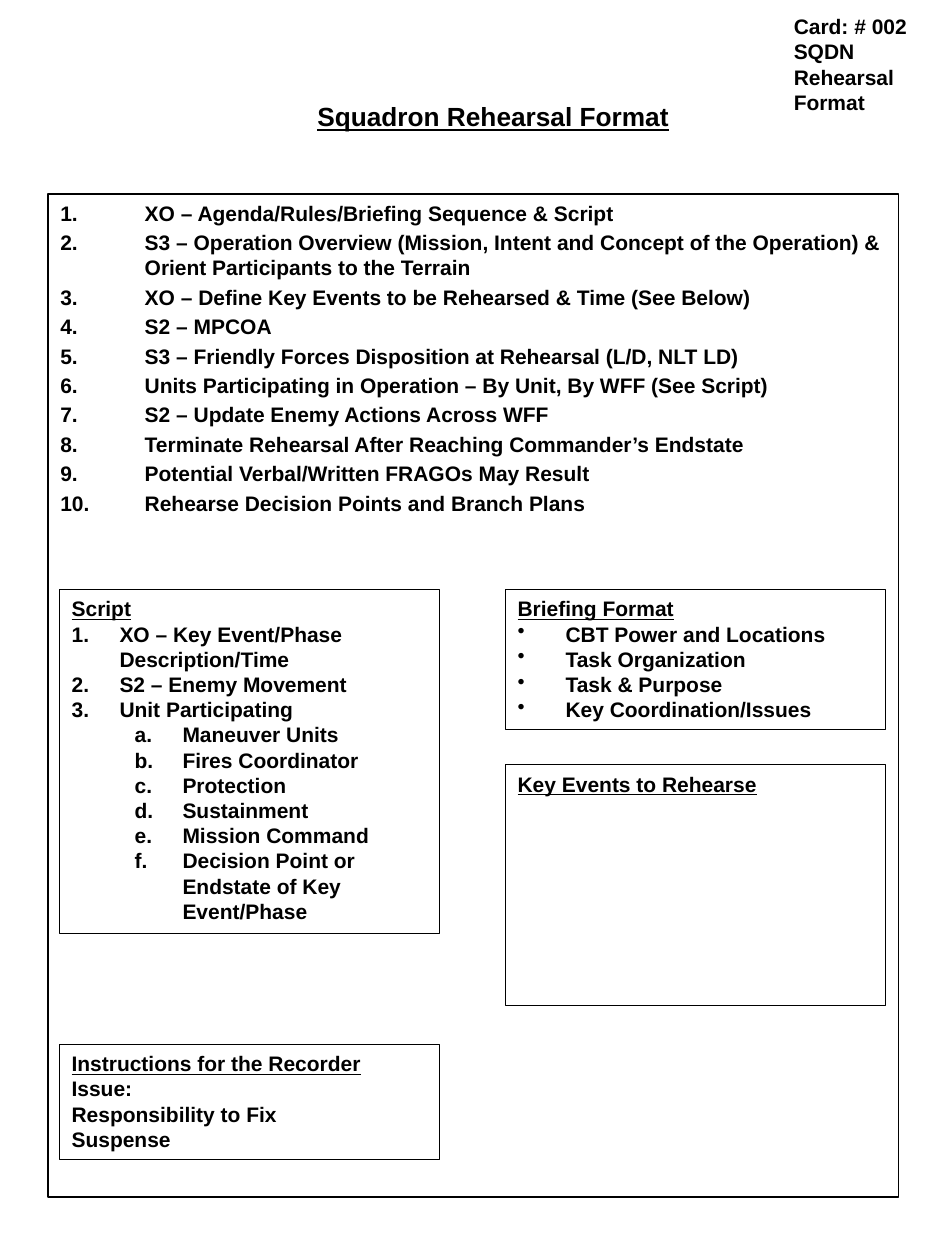
from dataclasses import dataclass

from lxml import etree
from pptx import Presentation
from pptx import util as u
from pptx.dml.color import RGBColor
from pptx.enum import shapes, text
from pptx.oxml.ns import qn


@dataclass(frozen=True)
class Theme:
    font: str = "Arial"
    ink: RGBColor = RGBColor(0, 0, 0)
    body_size: float = 12
    title_size: float = 15
    line_width: float = 0.75


@dataclass(frozen=True)
class Item:
    """One paragraph; marker is a numbering scheme or a bullet character."""
    words: str
    marker: str = ""
    level: int = 0
    underline: bool = False


NUMBER, LETTER, DOT = "arabicPeriod", "alphaLcPeriod", "•"
COLUMNS, ROWS = 75, 100
LEFT, RIGHT, BOX_WIDTH = 4.7, 40.1, 30.2
BOX_TOP = 46.8
HANG, LEVEL_STEP = 0.38, 0.5


def items(marker, *lines, level=0):
    return [Item(line, marker, level) for line in lines]


def heading(words):
    return [Item(words, underline=True)]


AGENDA = items(
    NUMBER,
    "XO – Agenda/Rules/Briefing Sequence & Script",
    "S3 – Operation Overview (Mission, Intent and Concept of the Operation) & "
    "Orient Participants to the Terrain",
    "XO – Define Key Events to be Rehearsed & Time (See Below)",
    "S2 – MPCOA",
    "S3 – Friendly Forces Disposition at Rehearsal (L/D, NLT LD)",
    "Units Participating in Operation – By Unit, By WFF (See Script)",
    "S2 – Update Enemy Actions Across WFF",
    "Terminate Rehearsal After Reaching Commander’s Endstate",
    "Potential Verbal/Written FRAGOs May Result",
    "Rehearse Decision Points and Branch Plans",
)
SCRIPT = (
    heading("Script")
    + items(NUMBER, "XO – Key Event/Phase Description/Time",
            "S2 – Enemy Movement", "Unit Participating")
    + items(LETTER, "Maneuver Units", "Fires Coordinator", "Protection",
            "Sustainment", "Mission Command",
            "Decision Point or Endstate of Key Event/Phase", level=1)
)
BRIEFING = heading("Briefing Format") + items(
    DOT, "CBT Power and Locations", "Task Organization", "Task & Purpose",
    "Key Coordination/Issues")
RECORDER = heading("Instructions for the Recorder") + items(
    "", "Issue:", "Responsibility to Fix", "Suspense")


class Card:
    def __init__(self, presentation, theme):
        self.theme = theme
        self.slide = presentation.slides.add_slide(presentation.slide_layouts[6])
        self.column = presentation.slide_width / COLUMNS
        self.row = presentation.slide_height / ROWS

    def place(self, left, top, width, height):
        return (round(left * self.column), round(top * self.row),
                round(width * self.column), round(height * self.row))

    def box(self, left, top, width, height, content, hang=HANG, gap=0):
        """Outlined rectangle holding a list; gap is points between items."""
        shape = self.slide.shapes.add_shape(
            shapes.MSO_SHAPE.RECTANGLE, *self.place(left, top, width, height))
        shape.shadow.inherit = False
        shape.fill.background()
        shape.line.color.rgb = self.theme.ink
        shape.line.width = u.Pt(self.theme.line_width)
        self.fill_text(shape.text_frame, content, self.theme.body_size, hang, gap)

    def label(self, left, top, width, height, item, size, wrap=True,
              margins=(0.1, 0.05)):
        frame = self.slide.shapes.add_textbox(
            *self.place(left, top, width, height)).text_frame
        frame.margin_left = frame.margin_right = u.Inches(margins[0])
        frame.margin_top = frame.margin_bottom = u.Inches(margins[1])
        self.fill_text(frame, [item], size, wrap=wrap)

    def fill_text(self, frame, content, size, hang=0, gap=0, wrap=True):
        frame.word_wrap = wrap
        frame.vertical_anchor = text.MSO_ANCHOR.TOP
        for index, item in enumerate(content):
            paragraph = frame.add_paragraph() if index else frame.paragraphs[0]
            paragraph.text = item.words
            paragraph.level = item.level
            paragraph.alignment = text.PP_ALIGN.LEFT
            paragraph.space_before = u.Pt(gap if index else 0)
            font = paragraph.font
            font.name, font.size, font.bold = self.theme.font, u.Pt(size), True
            font.underline = item.underline
            font.color.rgb = self.theme.ink
            self.mark(paragraph, item, hang)

    def mark(self, paragraph, item, hang):
        """Set the hanging indent and the number or bullet."""
        properties = paragraph._p.get_or_add_pPr()
        properties.set("marL", str(u.Inches(hang + item.level * LEVEL_STEP)))
        properties.set("indent", str(-u.Inches(hang)))
        if not item.marker:
            marker = etree.Element(qn("a:buNone"))
        elif item.marker == DOT:
            marker = etree.Element(qn("a:buChar"), char=DOT)
        else:
            marker = etree.Element(qn("a:buAutoNum"), type=item.marker)
        properties.find(qn("a:defRPr")).addprevious(marker)


def main():
    presentation = Presentation()
    presentation.slide_width = u.Inches(7.5)
    presentation.slide_height = u.Inches(10)
    theme = Theme()
    card = Card(presentation, theme)

    card.box(3.8, 15.4, 67.5, 79.6, AGENDA, hang=0.67, gap=2.4)
    card.label(62.5, 0.8, 11.7, 8.3, Item("Card: # 002\vSQDN Rehearsal Format"),
               theme.body_size, margins=(0.05, 0.03))
    for left, top, height, content in (
        (LEFT, BOX_TOP, 27.3, SCRIPT),
        (RIGHT, BOX_TOP, 11.1, BRIEFING),
        (RIGHT, 60.7, 19.1, heading("Key Events to Rehearse")),
        (LEFT, 82.9, 9.1, RECORDER),
    ):
        card.box(left, top, BOX_WIDTH, height, content)
    card.label(24.2, 7.5, 29.9, 3.5,
               Item("Squadron Rehearsal Format", underline=True),
               theme.title_size, wrap=False)
    presentation.save("out.pptx")


if __name__ == "__main__":
    main()
